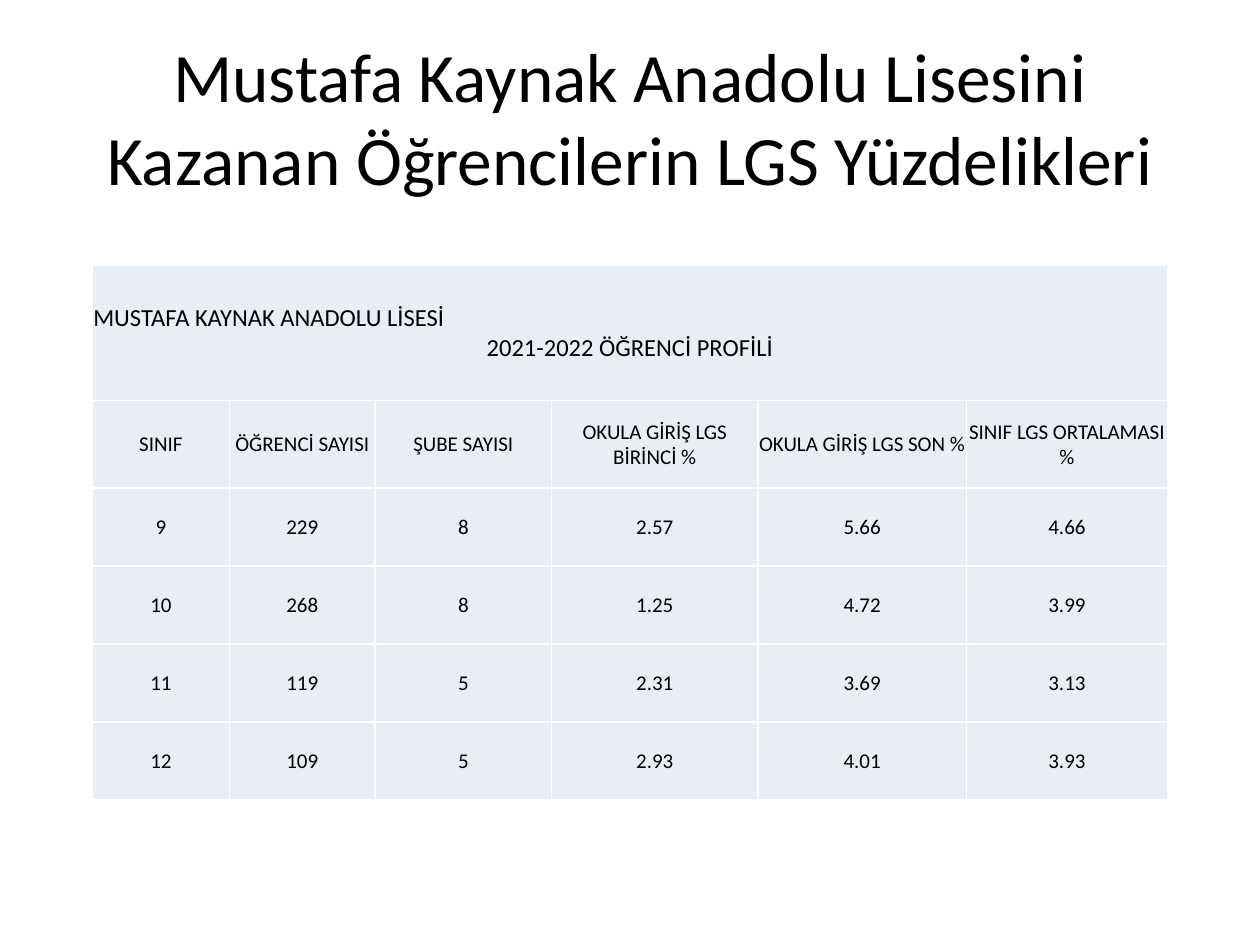
from lxml import etree
from pptx import Presentation
from pptx.dml.color import RGBColor
from pptx.enum.text import MSO_ANCHOR, PP_ALIGN
from pptx.oxml.ns import qn
from pptx.util import Cm, Pt

MIDDLE = MSO_ANCHOR.MIDDLE
LEFT, CENTER = PP_ALIGN.LEFT, PP_ALIGN.CENTER
TITLE_ONLY = 5

FONT = "Calibri"
BLACK, WHITE, PALE_BLUE = "000000", "FFFFFF", "E9EDF4"

TITLE = "Mustafa Kaynak Anadolu Lisesini Kazanan Öğrencilerin LGS Yüzdelikleri"
BANNER = "MUSTAFA KAYNAK ANADOLU LİSESİ\n2021-2022 ÖĞRENCİ PROFİLİ"
ROWS = [
    ["SINIF", "ÖĞRENCİ SAYISI", "ŞUBE SAYISI", "OKULA GİRİŞ LGS BİRİNCİ %",
     "OKULA GİRİŞ LGS SON %", "SINIF LGS ORTALAMASI %"],
    ["9", "229", "8", "2.57", "5.66", "4.66"],
    ["10", "268", "8", "1.25", "4.72", "3.99"],
    ["11", "119", "5", "2.31", "3.69", "3.13"],
    ["12", "109", "5", "2.93", "4.01", "3.93"],
]
COLUMN_WIDTHS = [2.77, 2.93, 3.56, 4.16, 4.2, 4.06]
ROW_HEIGHTS = [2.72, 1.77] + [1.57] * 4


def color(hex_value):
    return RGBColor.from_string(hex_value)


def format_text(text_frame, size, alignment=CENTER):
    for paragraph in text_frame.paragraphs:
        paragraph.alignment = alignment
        for run in paragraph.runs:
            run.font.name = FONT
            run.font.size = Pt(size)
            run.font.color.rgb = color(BLACK)


def add_borders(cell, hex_value, width):
    properties = cell._tc.get_or_add_tcPr()
    for position, side in enumerate(("a:lnL", "a:lnR", "a:lnT", "a:lnB")):
        line = etree.Element(qn(side), w=str(Pt(width)))
        fill = etree.SubElement(line, qn("a:solidFill"))
        etree.SubElement(fill, qn("a:srgbClr"), val=hex_value)
        properties.insert(position, line)  # borders must precede the fill


def fill_cell(cell, text, size):
    cell.text_frame.text = text
    format_text(cell.text_frame, size)
    cell.vertical_anchor = MIDDLE
    cell.margin_left = cell.margin_right = cell.margin_top = Cm(0.02)
    cell.margin_bottom = Cm(0)


def style_cell(cell):
    cell.fill.solid()
    cell.fill.fore_color.rgb = color(PALE_BLUE)
    add_borders(cell, WHITE, 1)


def add_title(slide):
    title = slide.shapes.title
    title.left, title.top = Cm(1.27), Cm(0.76)
    title.width, title.height = Cm(22.86), Cm(3.18)
    title.text_frame.text = TITLE
    title.text_frame.vertical_anchor = MIDDLE
    format_text(title.text_frame, 39.6)


def add_profile_table(slide):
    table = slide.shapes.add_table(
        len(ROW_HEIGHTS), len(COLUMN_WIDTHS), Cm(1.86), Cm(5.35),
        Cm(sum(COLUMN_WIDTHS)), Cm(sum(ROW_HEIGHTS))).table
    for column, width in zip(table.columns, COLUMN_WIDTHS):
        column.width = Cm(width)
    for row, height in zip(table.rows, ROW_HEIGHTS):
        row.height = Cm(height)
    for cell in table.iter_cells():
        style_cell(cell)

    banner = table.cell(0, 0)
    banner.merge(table.cell(0, len(COLUMN_WIDTHS) - 1))
    fill_cell(banner, BANNER, 14)
    banner.text_frame.paragraphs[0].alignment = LEFT
    for row_index, values in enumerate(ROWS, start=1):
        for column_index, value in enumerate(values):
            fill_cell(table.cell(row_index, column_index), value, 12)


def main():
    presentation = Presentation()
    presentation.slide_width, presentation.slide_height = Cm(25.4), Cm(19.05)
    slide = presentation.slides.add_slide(presentation.slide_layouts[TITLE_ONLY])
    add_title(slide)
    add_profile_table(slide)
    presentation.save("out.pptx")


if __name__ == "__main__":
    main()
